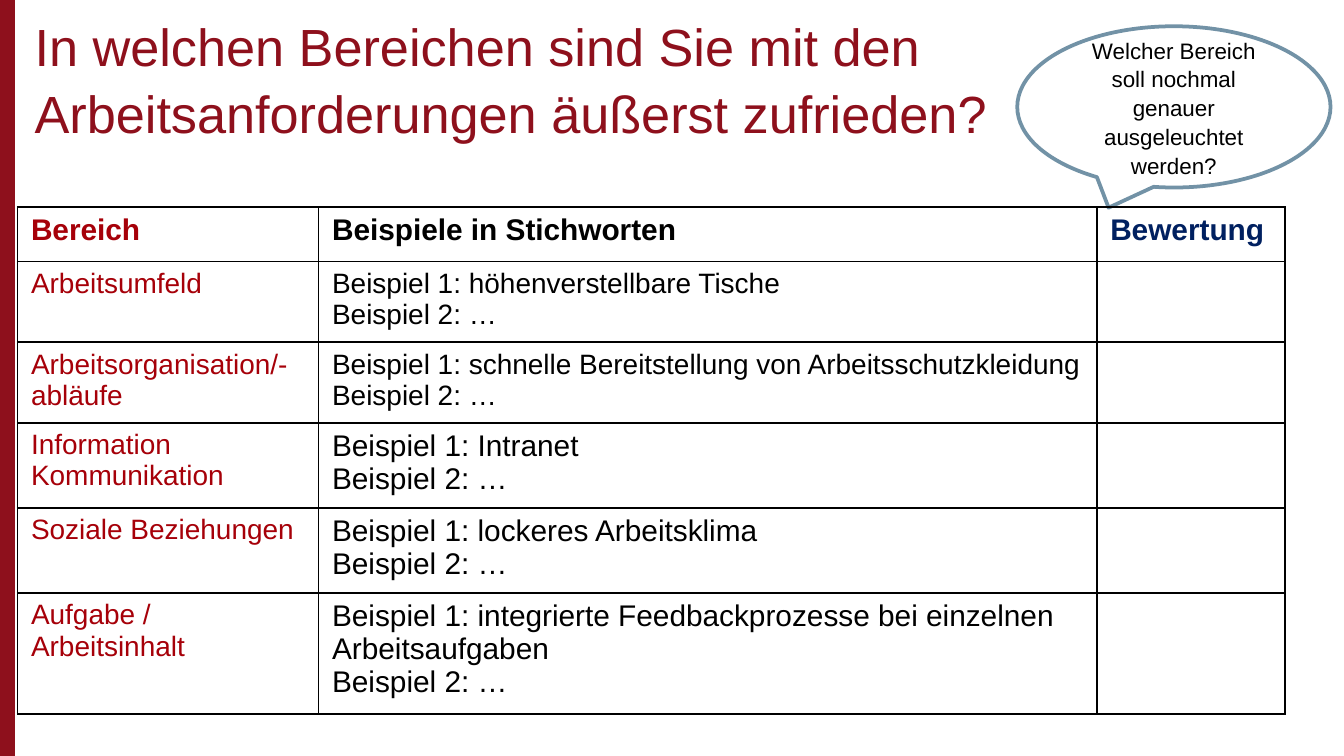
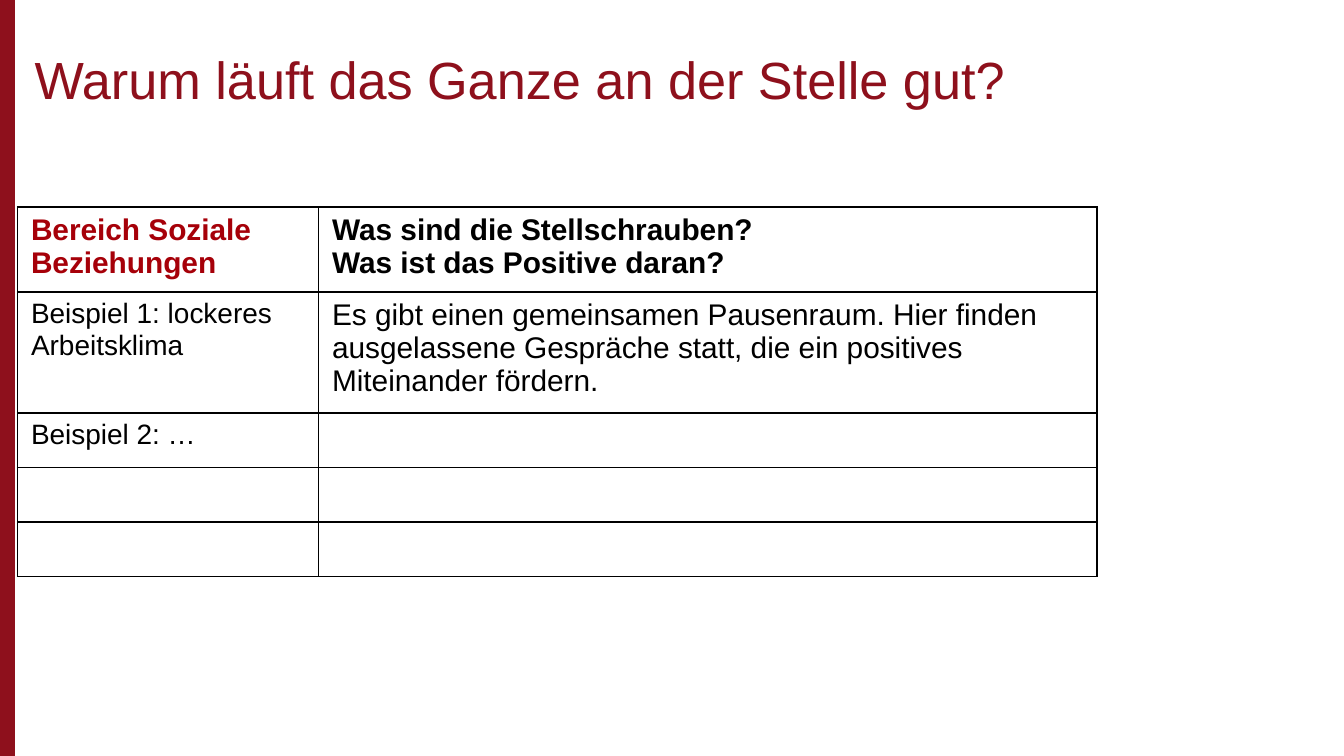
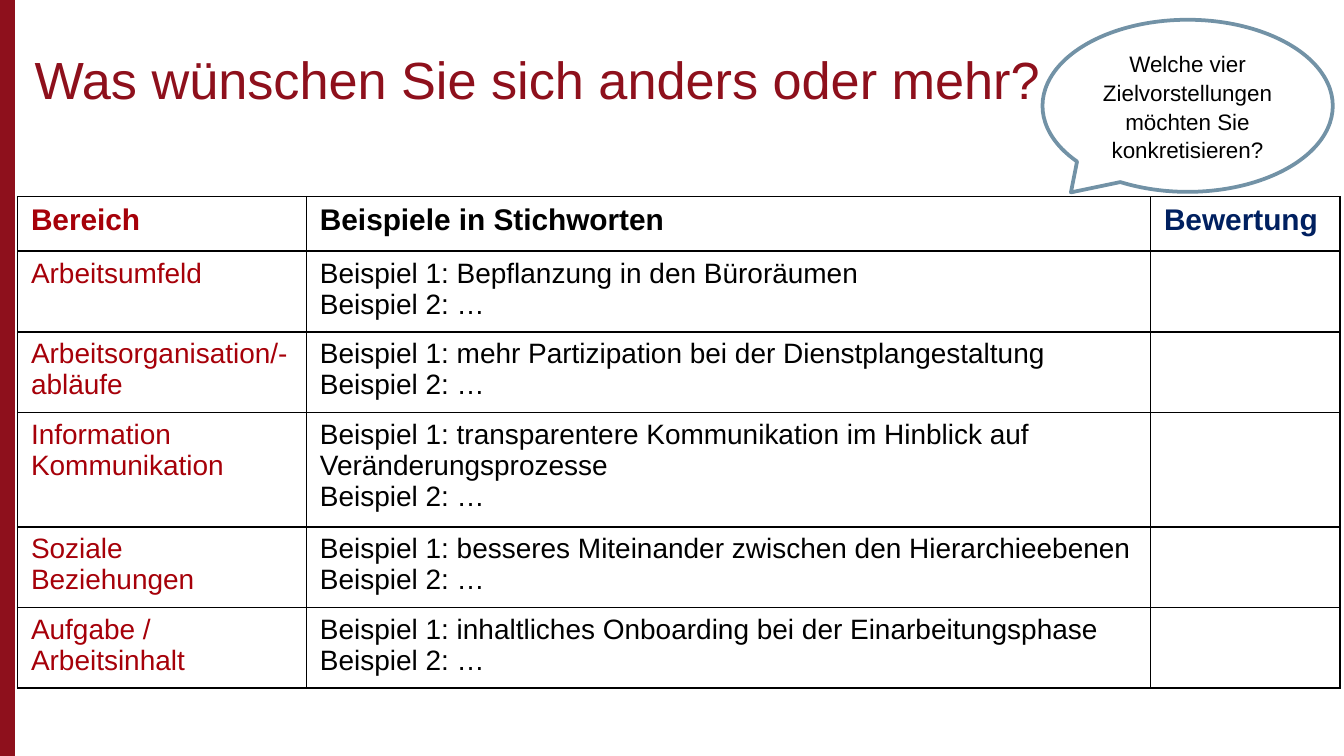
"""Build three workshop slides on job demands: areas, reasons and wishes."""
from dataclasses import dataclass
from typing import NamedTuple

from lxml.etree import SubElement
from pptx import Presentation
from pptx.dml.color import RGBColor
from pptx.enum.shapes import MSO_SHAPE
from pptx.enum.text import MSO_ANCHOR, PP_ALIGN
from pptx.oxml.ns import qn
from pptx.util import Pt


class TextStyle(NamedTuple):
    """Look of a piece of text."""
    size: float
    color: str
    bold: bool = False
    spacing: float = 1.0
    align: PP_ALIGN = PP_ALIGN.LEFT


@dataclass(frozen=True)
class Theme:
    """Colours, type styles and line widths shared by all slides."""
    font: str = "Arial"
    band: str = "8E101C"
    paper: str = "FFFFFF"
    bubble_line: str = "7292A6"
    grid_line: str = "000000"
    bubble_width: float = 2
    grid_width: float = 1
    title: TextStyle = TextStyle(28, "8E101C", spacing=1.07)
    bubble: TextStyle = TextStyle(12, "000000", spacing=1.07, align=PP_ALIGN.CENTER)
    area_head: TextStyle = TextStyle(16, "A60009", True)
    plain_head: TextStyle = TextStyle(16, "000000", True)
    rating_head: TextStyle = TextStyle(16, "002060", True)
    area: TextStyle = TextStyle(15, "A60009")
    body: TextStyle = TextStyle(15, "000000")
    large_body: TextStyle = TextStyle(16, "000000")


THEME = Theme()
ROW_HEIGHT = 29.2
TABLE_LEFT = 9.4


class Box(NamedTuple):
    """Left, top, width and height in points."""
    left: float
    top: float
    width: float
    height: float

    def lengths(self) -> list:
        """Return the four lengths as Pt values."""
        return [Pt(value) for value in self]


class Cell(NamedTuple):
    """Paragraphs of a table cell and their style."""
    lines: tuple = ()
    style: TextStyle = THEME.body


class Bubble(NamedTuple):
    """Speech bubble with an optional tip position."""
    box: Box
    text: str
    tip: tuple = ()


class Grid(NamedTuple):
    """Table with its place, column widths and rows of cells."""
    top: float
    height: float
    columns: tuple
    rows: list


class Page(NamedTuple):
    """Content of one slide."""
    title: str
    grid: Grid
    bubble: Bubble | None = None


BAND_BOX = Box(-12.2, -2.9, 20.2, 412.6)
TITLE_BOX = Box(11.5, 0, 708.5, 82)
MORE = "Beispiel 2: …"
AREAS = (
    ("Arbeitsumfeld",),
    ("Arbeitsorganisation/-abläufe",),
    ("Information", "Kommunikation"),
    ("Soziale Beziehungen",),
    ("Aufgabe / Arbeitsinhalt",),
)


def area_rows(examples: list[tuple[str, TextStyle]]) -> list:
    """Return the header row and one row per work area."""
    header = [Cell(("Bereich",), THEME.area_head),
              Cell(("Beispiele in Stichworten",), THEME.plain_head),
              Cell(("Bewertung",), THEME.rating_head)]
    return [header] + [
        [Cell(area, THEME.area), Cell((f"Beispiel 1: {example}", MORE), style), Cell()]
        for area, (example, style) in zip(AREAS, examples)
    ]


PAGES = [
    Page(
        "In welchen Bereichen sind Sie mit den Arbeitsanforderungen äußerst zufrieden?",
        Grid(110.8, 271.4, (161.3, 416.9, 100.8), area_rows([
            ("höhenverstellbare Tische", THEME.body),
            ("schnelle Bereitstellung von Arbeitsschutzkleidung", THEME.body),
            ("Intranet", THEME.large_body),
            ("lockeres Arbeitsklima", THEME.large_body),
            ("integrierte Feedbackprozesse bei einzelnen Arbeitsaufgaben", THEME.large_body),
        ])),
        Bubble(Box(545, 14.1, 167.8, 86.4),
               "Welcher Bereich soll nochmal genauer ausgeleuchtet werden?"),
    ),
    Page(
        "Warum läuft das Ganze an der Stelle gut?",
        Grid(110.8, 198, (161.3, 416.9), [
            [Cell(("Bereich Soziale Beziehungen",), THEME.area_head),
             Cell(("Was sind die Stellschrauben?", "Was ist das Positive daran?"),
                  THEME.plain_head)],
            [Cell(("Beispiel 1: lockeres Arbeitsklima",)),
             Cell(("Es gibt einen gemeinsamen Pausenraum. Hier finden ausgelassene "
                   "Gespräche statt, die ein positives Miteinander fördern.",),
                  THEME.large_body)],
            [Cell((MORE,)), Cell()],
            [Cell(), Cell()],
            [Cell(), Cell()],
        ]),
    ),
    Page(
        "Was wünschen Sie sich anders oder mehr?",
        Grid(105.3, 263.5, (154.8, 452.2, 101.5), area_rows([
            ("Bepflanzung in den Büroräumen", THEME.body),
            ("mehr Partizipation bei der Dienstplangestaltung", THEME.body),
            ("transparentere Kommunikation im Hinblick auf Veränderungsprozesse", THEME.body),
            ("besseres Miteinander zwischen den Hierarchieebenen", THEME.body),
            ("inhaltliches Onboarding bei der Einarbeitungsphase", THEME.body),
        ])),
        Bubble(Box(558.5, 10.6, 155.5, 92.2),
               "Welche vier Zielvorstellungen möchten Sie konkretisieren?",
               (-0.402, 0.503)),
    ),
]


def set_all(target, values: dict) -> None:
    """Set each named attribute of the target."""
    for name, value in values.items():
        setattr(target, name, value)


def write_lines(frame, lines: tuple, style: TextStyle) -> None:
    """Write one paragraph per line in the given style."""
    frame.word_wrap = True
    for index, line in enumerate(lines):
        para = frame.add_paragraph() if index else frame.paragraphs[0]
        set_all(para, {"alignment": style.align, "line_spacing": style.spacing})
        span = para.add_run()
        span.text = line
        set_all(span.font, {"name": THEME.font, "size": Pt(style.size), "bold": style.bold})
        span.font.color.rgb = RGBColor.from_string(style.color)


def draw_shape(slide, kind: MSO_SHAPE, box: Box, fill: str):
    """Add a flat filled shape without outline."""
    shape = slide.shapes.add_shape(kind, *box.lengths())
    shape.shadow.inherit = False
    shape.fill.solid()
    shape.fill.fore_color.rgb = RGBColor.from_string(fill)
    shape.line.fill.background()
    return shape


def draw_title(slide, text: str) -> None:
    """Add the slide title."""
    frame = slide.shapes.add_textbox(*TITLE_BOX.lengths()).text_frame
    frame.vertical_anchor = MSO_ANCHOR.MIDDLE
    write_lines(frame, (text,), THEME.title)


def draw_bubble(slide, bubble: Bubble) -> None:
    """Add a speech bubble with its question."""
    shape = draw_shape(slide, MSO_SHAPE.OVAL_CALLOUT, bubble.box, THEME.paper)
    for index, value in enumerate(bubble.tip):
        shape.adjustments[index] = value
    shape.line.color.rgb = RGBColor.from_string(THEME.bubble_line)
    shape.line.width = Pt(THEME.bubble_width)
    shape.text_frame.vertical_anchor = MSO_ANCHOR.MIDDLE
    write_lines(shape.text_frame, (bubble.text,), THEME.bubble)


def draw_borders(cell) -> None:
    """Draw a line on all four sides of a table cell."""
    properties = cell._tc.get_or_add_tcPr()
    for index, side in enumerate(("lnL", "lnR", "lnT", "lnB")):
        line = SubElement(properties, qn(f"a:{side}"), w=str(Pt(THEME.grid_width)))
        fill = SubElement(line, qn("a:solidFill"))
        SubElement(fill, qn("a:srgbClr"), val=THEME.grid_line)
        properties.insert(index, line)


def draw_grid(slide, grid: Grid) -> None:
    """Add a table with plain cells and thin borders."""
    box = Box(TABLE_LEFT, grid.top, sum(grid.columns), ROW_HEIGHT * len(grid.rows))
    holder = slide.shapes.add_table(len(grid.rows), len(grid.columns), *box.lengths())
    table = holder.table
    set_all(table, {"first_row": False, "horz_banding": False})
    for column, width in zip(table.columns, grid.columns):
        column.width = Pt(width)
    for row, contents in zip(table.rows, grid.rows):
        row.height = Pt(ROW_HEIGHT)
        for cell, content in zip(row.cells, contents):
            cell.fill.background()
            draw_borders(cell)
            write_lines(cell.text_frame, content.lines, content.style)
    holder.height = Pt(grid.height)


def draw_page(deck, page: Page) -> None:
    """Add one slide with band, title, bubble and table."""
    slide = deck.slides.add_slide(deck.slide_layouts[6])
    draw_shape(slide, MSO_SHAPE.RECTANGLE, BAND_BOX, THEME.band)
    draw_title(slide, page.title)
    if page.bubble:
        draw_bubble(slide, page.bubble)
    draw_grid(slide, page.grid)


def main() -> None:
    """Build and save the deck."""
    deck = Presentation()
    set_all(deck, {"slide_width": Pt(720), "slide_height": Pt(405)})
    for page in PAGES:
        draw_page(deck, page)
    deck.save("out.pptx")


if __name__ == "__main__":
    main()
